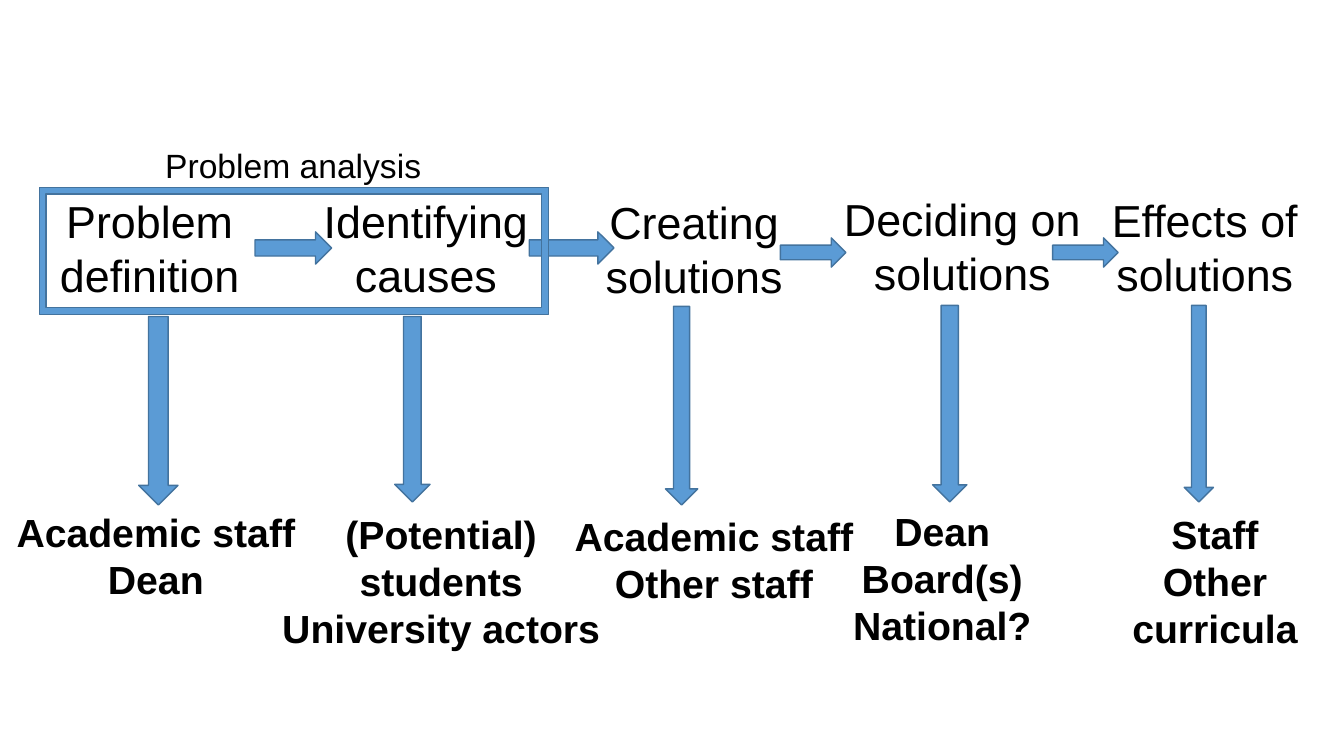
from pptx import Presentation
from pptx.dml.color import RGBColor
from pptx.enum.shapes import MSO_SHAPE
from pptx.enum.text import MSO_AUTO_SIZE, PP_ALIGN
from pptx.util import Inches, Pt

BLUE = RGBColor(0x5B, 0x9B, 0xD5)
DARK_BLUE = RGBColor(0x43, 0x73, 0x9E)
BLACK = RGBColor(0, 0, 0)
RIGHT_ARROW, DOWN_ARROW, FRAME = MSO_SHAPE.RIGHT_ARROW, MSO_SHAPE.DOWN_ARROW, MSO_SHAPE.FRAME
CENTER, LEFT = PP_ALIGN.CENTER, PP_ALIGN.LEFT
GROW = MSO_AUTO_SIZE.SHAPE_TO_FIT_TEXT

prs = Presentation()
prs.slide_width, prs.slide_height = Inches(13.33), Inches(7.5)
slide = prs.slides.add_slide(prs.slide_layouts[6])


def add_text(box, paragraphs, size=32, bold=False, align=CENTER, wrap=True):
    """A vertical tab within a paragraph becomes a line break."""
    frame = slide.shapes.add_textbox(*map(Inches, box)).text_frame
    frame.word_wrap = wrap
    frame.auto_size = GROW
    for i, text in enumerate(paragraphs):
        paragraph = frame.paragraphs[0] if i == 0 else frame.add_paragraph()
        paragraph.text = text
        paragraph.alignment = align
        for run in paragraph.runs:
            run.font.name = "Arial"
            run.font.size = Pt(size)
            run.font.bold = bold
            run.font.color.rgb = BLACK


def add_blue_shape(kind, box):
    shape = slide.shapes.add_shape(kind, *map(Inches, box))
    shape.shadow.inherit = False
    shape.fill.solid()
    shape.fill.fore_color.rgb = BLUE
    shape.line.color.rgb = DARK_BLUE
    shape.line.width = Pt(1)
    return shape


# Arrows between the steps
for box in [
    (2.53, 2.3, 0.76, 0.32),
    (5.25, 2.3, 0.84, 0.32),
    (7.74, 2.36, 0.65, 0.29),
    (10.44, 2.36, 0.65, 0.29),
]:
    add_blue_shape(RIGHT_ARROW, box)

# Arrows from each step to its actors: center x, top, width, height
for center, top, width, height in [
    (1.57, 3.14, 0.39, 1.87),
    (4.09, 3.14, 0.35, 1.84),
    (6.76, 3.04, 0.32, 1.97),
    (9.42, 3.03, 0.34, 1.95),
    (11.89, 3.03, 0.29, 1.95),
]:
    add_blue_shape(DOWN_ARROW, (center - width / 2, top, width, height))

# Frame around the problem analysis
analysis_frame = add_blue_shape(FRAME, (0.39, 1.86, 5.05, 1.26))
analysis_frame.adjustments[0] = 0.053
add_text((1.54, 1.39, 2.77, 0.5), ["Problem analysis"], size=24, align=LEFT, wrap=False)

# Steps of the process
for box, step in [
    ((0.44, 1.87, 2.09, 1.18), ["Problem", "definition"]),
    ((3.09, 1.87, 2.27, 1.18), ["Identifying", "causes"]),
    ((5.77, 1.88, 2.23, 1.18), ["Creating", "solutions"]),
    ((8.24, 1.85, 2.61, 1.18), ["Deciding on", "solutions"]),
    ((10.89, 1.86, 2.12, 1.18), ["Effects of", "solutions"]),
]:
    add_text(box, step)

# Actors involved in each step
for box, actors in [
    ((0, 4.99, 3.09, 1.04), ["Academic staff", "Dean"]),
    ((2.59, 5.01, 3.57, 1.51), ["(Potential) students", "University actors"]),
    ((5.45, 5.03, 3.26, 1.04), ["Academic staff", "Other staff"]),
    ((8.07, 4.98, 2.55, 1.51), ["Dean\vBoard(s)", "National?"]),
    ((10.44, 5.01, 3.22, 1.51), ["Staff\vOther", "curricula"]),
]:
    add_text(box, actors, size=28, bold=True)

prs.save("out.pptx")
